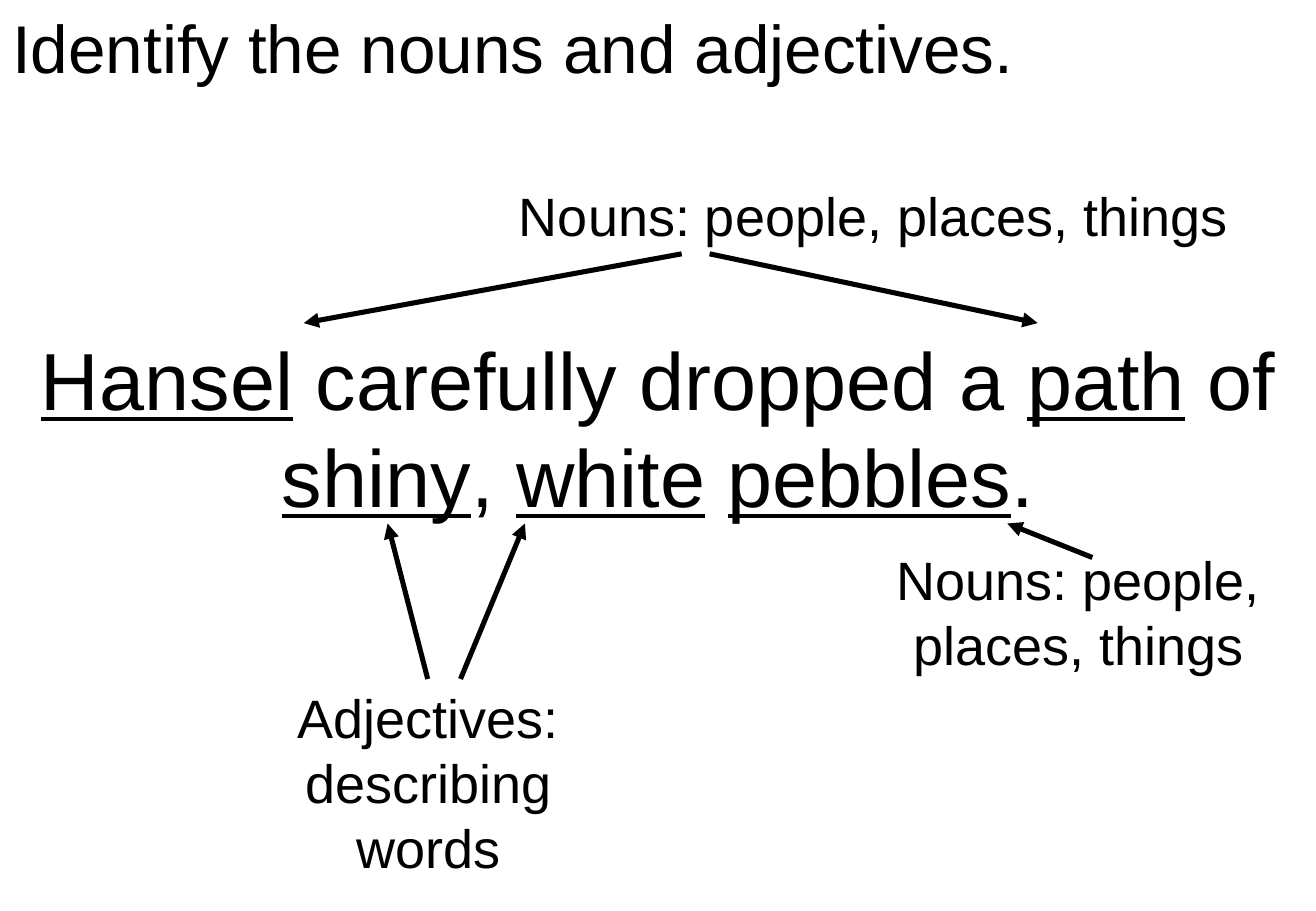
from dataclasses import dataclass

from lxml import etree
from pptx import Presentation
from pptx import util as u
from pptx.dml.color import RGBColor
from pptx.enum import shapes, text
from pptx.oxml import ns
from pptx.shapes.connector import Connector
from pptx.slide import Slide
from pptx.text.text import TextFrame

COLORS = {"ink": "000000", "paper": "FFFFFF"}
FONT = "Arial"
SLIDE_WIDTH = 10.83
NOUNS = "Nouns: people, places, things"


@dataclass(frozen=True)
class Run:
    wording: str
    underlined: bool = False


@dataclass(frozen=True)
class TextBlock:
    left: float
    top: float
    width: float
    height: float
    size: int
    runs: tuple[Run, ...]
    alignment: text.PP_ALIGN = text.PP_ALIGN.CENTER


@dataclass(frozen=True)
class Arrow:
    start_x: float
    start_y: float
    end_x: float
    end_y: float


HEADING = TextBlock(
    0, 0, SLIDE_WIDTH, 0.76, 40,
    (Run("Identify the nouns and adjectives."),),
    text.PP_ALIGN.LEFT,
)

SENTENCE = TextBlock(
    0, 2.66, SLIDE_WIDTH, 1.69, 48,
    (
        Run("Hansel", True),
        Run(" carefully dropped a "),
        Run("path", True),
        Run(" of "),
        Run("shiny", True),
        Run(", "),
        Run("white", True),
        Run(" "),
        Run("pebbles", True),
        Run("."),
    ),
)

LABELS = (
    TextBlock(3.67, 1.45, 7.04, 0.64, 32, (Run(NOUNS),)),
    TextBlock(7.19, 4.45, 3.37, 1.18, 32, (Run(NOUNS),)),
    TextBlock(1.84, 5.59, 3.37, 1.72, 32, (Run("Adjectives: describing words"),)),
)

ARROWS = (
    Arrow(5.61, 2.09, 2.5, 2.66),
    Arrow(5.84, 2.09, 8.54, 2.66),
    Arrow(8.99, 4.59, 8.29, 4.31),
    Arrow(3.79, 5.59, 4.32, 4.31),
    Arrow(3.52, 5.59, 3.19, 4.31),
)


def color(name: str) -> RGBColor:
    return RGBColor.from_string(COLORS[name])


def write_text(frame: TextFrame, block: TextBlock) -> None:
    frame.word_wrap = True
    frame.auto_size = text.MSO_AUTO_SIZE.NONE
    frame.vertical_anchor = text.MSO_ANCHOR.TOP
    paragraph = frame.paragraphs[0]
    paragraph.alignment = block.alignment
    for part in block.runs:
        run = paragraph.add_run()
        run.text = part.wording
        run.font.name = FONT
        run.font.size = u.Pt(block.size)
        run.font.underline = part.underlined
        run.font.color.rgb = color("ink")


def add_heading(slide: Slide, block: TextBlock) -> None:
    title = slide.shapes.title
    title.left, title.top = u.Inches(block.left), u.Inches(block.top)
    title.width, title.height = u.Inches(block.width), u.Inches(block.height)
    write_text(title.text_frame, block)


def add_text(slide: Slide, block: TextBlock) -> None:
    box = slide.shapes.add_textbox(
        u.Inches(block.left), u.Inches(block.top),
        u.Inches(block.width), u.Inches(block.height),
    )
    write_text(box.text_frame, block)


def add_arrow(slide: Slide, arrow: Arrow) -> Connector:
    connector = slide.shapes.add_connector(
        shapes.MSO_CONNECTOR.STRAIGHT,
        u.Inches(arrow.start_x), u.Inches(arrow.start_y),
        u.Inches(arrow.end_x), u.Inches(arrow.end_y),
    )
    connector.line.color.rgb = color("ink")
    connector.line.width = u.Pt(3)
    line = connector.line._get_or_add_ln()
    etree.SubElement(line, ns.qn("a:tailEnd"), type="triangle")
    etree.SubElement(connector._element.spPr, ns.qn("a:effectLst"))
    return connector


def main() -> None:
    presentation = Presentation()
    presentation.slide_width = u.Inches(SLIDE_WIDTH)
    presentation.slide_height = u.Inches(7.5)
    title_only = presentation.slide_layouts.get_by_name("Title Only")
    slide = presentation.slides.add_slide(title_only)
    slide.background.fill.solid()
    slide.background.fill.fore_color.rgb = color("paper")

    add_heading(slide, HEADING)
    add_text(slide, SENTENCE)
    for arrow in ARROWS:
        add_arrow(slide, arrow)
    for label in LABELS:
        add_text(slide, label)

    presentation.save("out.pptx")


if __name__ == "__main__":
    main()
